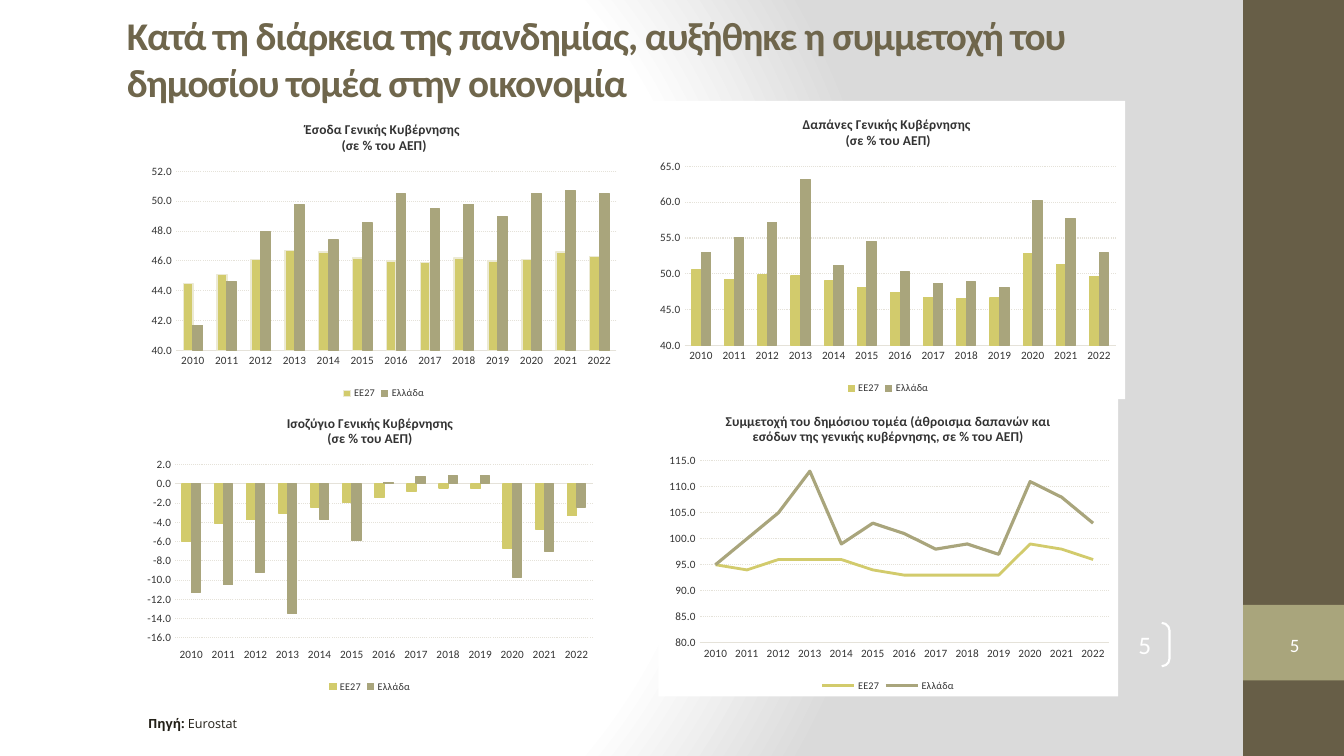
import pptx
import pptx.chart.data
import pptx.dml.color
import pptx.enum.chart
import pptx.enum.dml
import pptx.enum.shapes
import pptx.enum.text
import pptx.oxml
import pptx.oxml.ns
import pptx.util

PX = 9144  # EMU; 100 px to the inch
YEARS = [str(year) for year in range(2010, 2023)]
EU, GREECE = "ΕΕ27", "Ελλάδα"
SERIES_COLORS = {EU: "D2CB6C", GREECE: "A9A57C"}
INK, PALE, WHITE = "333333", "E5E2D9", "FFFFFF"
DARK_OLIVE, OLIVE = "675E47", "A9A57C"

REVENUE = {
    EU: [44.5, 45.1, 46.1, 46.7, 46.6, 46.2, 46, 45.9, 46.2, 46, 46.1, 46.6, 46.3],
    GREECE: [41.7, 44.6, 48, 49.8, 47.4, 48.6, 50.5, 49.5, 49.8, 49, 50.5, 50.7, 50.5],
}
SPENDING = {
    EU: [50.5, 49.2, 49.8, 49.7, 49, 48.1, 47.4, 46.7, 46.5, 46.6, 52.8, 51.3, 49.6],
    GREECE: [53, 55.1, 57.2, 63.2, 51.2, 54.5, 50.3, 48.7, 48.9, 48.1, 60.2, 57.7, 52.9],
}
BALANCE = {
    EU: [-6, -4.1, -3.7, -3, -2.4, -1.9, -1.4, -0.8, -0.4, -0.5, -6.7, -4.7, -3.3],
    GREECE: [-11.3, -10.5, -9.2, -13.5, -3.7, -5.9, 0.2, 0.8, 0.9, 0.9, -9.7, -7, -2.4],
}
PARTICIPATION = {
    name: [round(sum(pair)) for pair in zip(REVENUE[name], SPENDING[name])]
    for name in REVENUE
}


def color(hex_string):
    return pptx.dml.color.RGBColor.from_string(hex_string)


def emu(*lengths):
    return [pptx.util.Emu(length * PX) for length in lengths]


def xml(markup):
    """Parse markup in which {a} and {c} stand for the namespace declarations."""
    return pptx.oxml.parse_xml(markup.format(
        a=pptx.oxml.ns.nsdecls("a"), c=pptx.oxml.ns.nsdecls("c")))


def set_font(font, size, hex_string, bold=False, name="Calibri"):
    font.size = pptx.util.Pt(size)
    font.name = name
    font.bold = bold
    font.color.rgb = color(hex_string)


def write(shape, *runs, size, hex_string, name="Calibri", align="LEFT",
          anchor="TOP", insets=(10, 5, 10, 5), spacing=None):
    """Fill a shape with one paragraph of (text, bold) runs."""
    frame = shape.text_frame
    frame.word_wrap = True
    frame.vertical_anchor = getattr(pptx.enum.text.MSO_ANCHOR, anchor)
    (frame.margin_left, frame.margin_top,
     frame.margin_right, frame.margin_bottom) = emu(*insets)
    paragraph = frame.paragraphs[0]
    paragraph.alignment = getattr(pptx.enum.text.PP_ALIGN, align)
    for text, bold in runs:
        run = paragraph.add_run()
        run.text = text
        set_font(run.font, size, hex_string, bold, name)
        if spacing is not None:
            run.font._element.set("spc", str(spacing))


def add_text(slide, box, *runs, **text_format):
    write(slide.shapes.add_textbox(*emu(*box)), *runs, **text_format)


def add_background(slide):
    slide.background.fill.gradient()
    gradient = next(slide.element.iter(pptx.oxml.ns.qn("a:gradFill")))
    stops = "".join(
        f'<a:gs pos="{position}"><a:srgbClr val="{tone}"/></a:gs>'
        for position, tone in ((0, WHITE), (75000, WHITE), (100000, "DADADA")))
    gradient.getparent().replace(gradient, xml(
        '<a:gradFill {a} rotWithShape="1"><a:gsLst>' + stops + '</a:gsLst>'
        '<a:path path="circle"><a:fillToRect l="20000" t="50000" r="100000" '
        'b="50000"/></a:path></a:gradFill>'))


def add_side_band(slide, left, top, width, height):
    number_top, number_height = top + 600, 75
    for y, band_height, tone in ((top, height, DARK_OLIVE),
                                 (number_top, number_height, OLIVE)):
        band = slide.shapes.add_shape(pptx.enum.shapes.MSO_SHAPE.RECTANGLE,
                                      *emu(left, y, width, band_height))
        band.shadow.inherit = False
        band.fill.solid()
        band.fill.fore_color.rgb = color(tone)
        band.line.fill.background()
    add_text(slide, (left + 11, number_top + 18, 80, 43), ("5", False), size=13.5,
             hex_string=WHITE, align="CENTER", anchor="MIDDLE", insets=(0, 0, 0, 0))


def add_bracketed_number(slide, *box):
    bracket = slide.shapes.add_shape(pptx.enum.shapes.MSO_SHAPE.DOUBLE_BRACKET, *emu(*box))
    bracket.adjustments[0] = 0.18
    bracket.shadow.inherit = False
    bracket.fill.background()
    bracket.line.color.rgb = color(WHITE)
    bracket.line.width = pptx.util.Pt(1.5)
    write(bracket, ("5", False), size=18, hex_string=WHITE, align="CENTER",
          anchor="MIDDLE", insets=(11, 0, 0, 0))


def style_axes(chart, low, high, step):
    for axis in (chart.category_axis, chart.value_axis):
        axis.major_tick_mark = axis.minor_tick_mark = pptx.enum.chart.XL_TICK_MARK.NONE
        set_font(axis.tick_labels.font, 8, INK)
    categories, values = chart.category_axis, chart.value_axis
    positions = pptx.enum.chart.XL_TICK_LABEL_POSITION
    categories.tick_label_position = positions.LOW if low < 0 else positions.NEXT_TO_AXIS
    categories.has_major_gridlines = False
    values.has_major_gridlines = True
    grid = values.major_gridlines.format.line
    for line in (categories.format.line, grid):
        line.color.rgb = color(PALE)
        line.width = pptx.util.Pt(0.75)
    grid.dash_style = pptx.enum.dml.MSO_LINE.ROUND_DOT
    values.format.line.fill.background()
    values.minimum_scale, values.maximum_scale, values.major_unit = low, high, step
    values.tick_labels.number_format = "#,##0.0"
    values.tick_labels.number_format_is_linked = False


def style_series(series, is_line, eu_outline):
    tone = SERIES_COLORS[series.name]
    is_eu = series.name == EU
    line = series.format.line
    line.color.rgb = color(eu_outline if is_eu else tone)
    if is_line:
        series.smooth = False
        line.width = pptx.util.Pt(2 if is_eu else 2.25)
    else:
        series.invert_if_negative = False
        series.format.fill.solid()
        series.format.fill.fore_color.rgb = color(tone)
        line.width = pptx.util.Pt(1 if is_eu else 0.75)


def place_plot(chart, left, top, height):
    """Set the inner plot area, in hundredths of the chart."""
    qn = pptx.oxml.ns.qn
    plot_area = next(chart.element.iter(qn("c:plotArea")))
    for layout in plot_area.findall(qn("c:layout")):
        plot_area.remove(layout)
    places = "".join(f'<c:{key} val="{value / 100:.2f}"/>' for key, value in
                     (("x", left), ("y", top), ("w", 98 - left), ("h", height)))
    plot_area.insert(0, xml(
        '<c:layout {c}><c:manualLayout><c:layoutTarget val="inner"/>'
        '<c:xMode val="edge"/><c:yMode val="edge"/>' + places +
        '</c:manualLayout></c:layout>'))


def add_indicator_chart(slide, box, title, data, scale, plot_place,
                        kind="COLUMN_CLUSTERED", eu_outline=SERIES_COLORS[EU]):
    chart_data = pptx.chart.data.CategoryChartData(number_format="0.0")
    chart_data.categories = YEARS
    for name, values in data.items():
        chart_data.add_series(name, values)
    chart = slide.shapes.add_chart(getattr(pptx.enum.chart.XL_CHART_TYPE, kind),
                                   *emu(*box), chart_data).chart
    set_font(chart.font, 8, "000000")
    chart.element.find(pptx.oxml.ns.qn("c:chart")).addnext(xml(
        '<c:spPr {c} {a}><a:solidFill><a:srgbClr val="' + WHITE +
        '"/></a:solidFill><a:ln><a:noFill/></a:ln></c:spPr>'))
    chart.has_title = True
    chart.chart_title.include_in_layout = False
    chart.chart_title.text_frame.text = title
    for paragraph in chart.chart_title.text_frame.paragraphs:
        for run in paragraph.runs:
            set_font(run.font, 9.6, INK, bold=True)
    chart.has_legend = True
    chart.legend.position = pptx.enum.chart.XL_LEGEND_POSITION.BOTTOM
    chart.legend.include_in_layout = False
    set_font(chart.legend.font, 7.3, INK)
    style_axes(chart, *scale)
    plot = chart.plots[0]
    plot.vary_by_categories = False
    is_line = kind == "LINE"
    if not is_line:
        plot.gap_width = 150
    for series in plot.series:
        style_series(series, is_line, eu_outline)
    place_plot(chart, *plot_place)


def build_public_sector_slide(slide):
    add_background(slide)
    add_side_band(slide, 1233, 0, 100, 750)
    add_text(slide, (116, 11, 1069, 93),
             ("Κατά τη διάρκεια της πανδημίας, αυξήθηκε η συμμετοχή του "
              "δημοσίου τομέα στην οικονομία", True),
             size=28, hex_string="6F664C", anchor="MIDDLE", spacing=-75)
    add_text(slide, (137, 705, 406, 44), ("Πηγή: ", True), ("Eurostat", False),
             size=9, hex_string="232018", name="Open Sans")
    add_bracketed_number(slide, 1100, 618, 60, 43)
    add_indicator_chart(slide, (141, 105, 480, 296), "Έσοδα Γενικής Κυβέρνησης \n(σε % του ΑΕΠ)",
                        REVENUE, (40, 52, 2), (7, 22, 60), eu_outline="ECEAD4")
    add_indicator_chart(slide, (646, 100, 470, 296), "Δαπάνες Γενικής Κυβέρνησης \n(σε % του ΑΕΠ)",
                        SPENDING, (40, 65, 5), (7, 22, 60))
    add_indicator_chart(slide, (137, 396, 460, 296), "Ισοζύγιο Γενικής Κυβέρνησης\n(σε % του ΑΕΠ)",
                        BALANCE, (-16, 2, 2), (8, 22, 58))
    add_indicator_chart(slide, (653, 395, 456, 296),
                        "Συμμετοχή του δημόσιου τομέα (άθροισμα δαπανών και "
                        "εσόδων της γενικής κυβέρνησης, σε % του ΑΕΠ)",
                        PARTICIPATION, (80, 115, 5), (9, 21, 61), kind="LINE")


def main():
    presentation = pptx.Presentation()
    presentation.slide_width, presentation.slide_height = emu(1333, 750)
    build_public_sector_slide(presentation.slides.add_slide(presentation.slide_layouts[6]))
    presentation.save("out.pptx")


if __name__ == "__main__":
    main()
